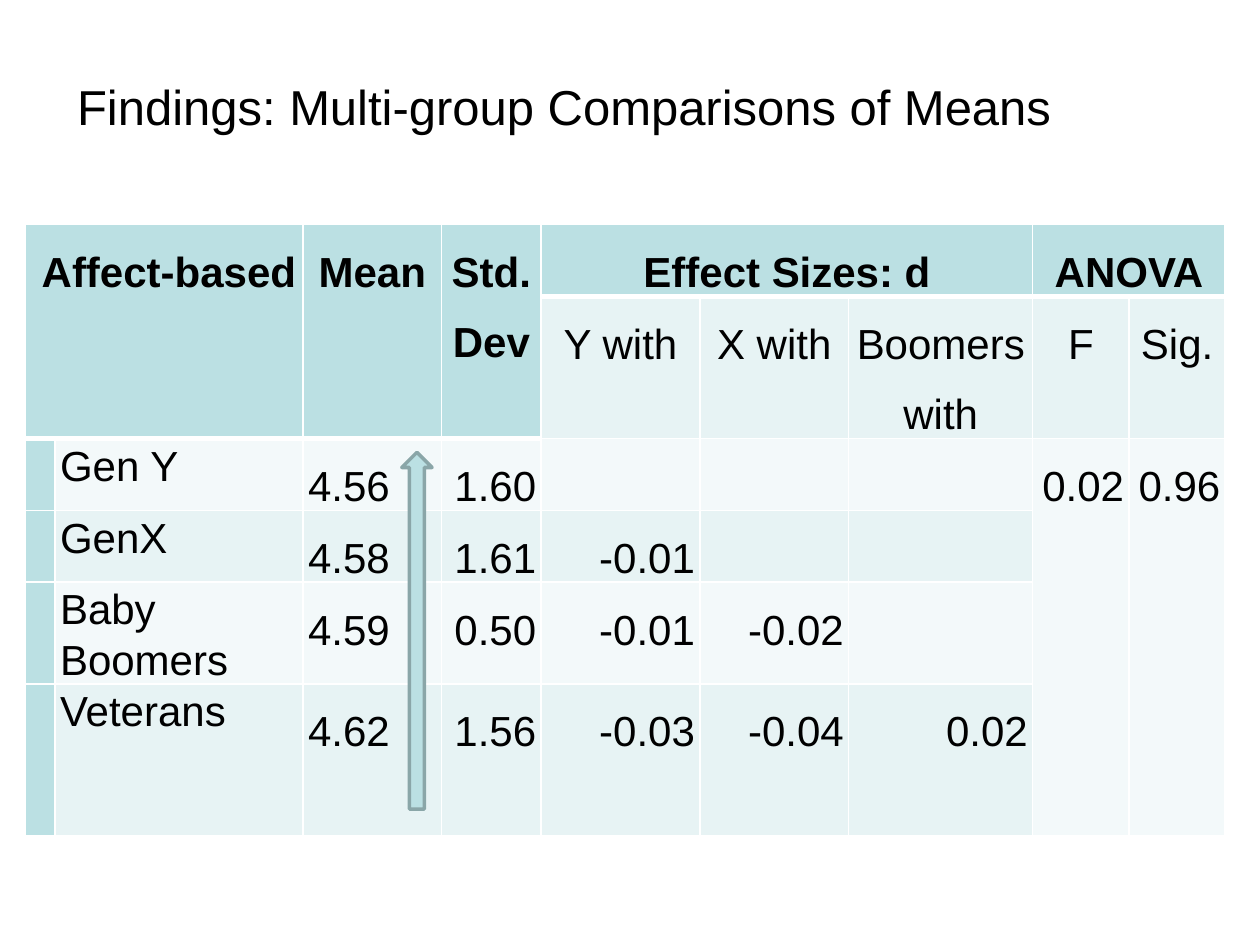
import collections

import lxml.etree
import pptx
import pptx.dml.color
import pptx.enum.shapes
import pptx.enum.text
import pptx.oxml.ns
import pptx.util

Cm = pptx.util.Cm
Pt = pptx.util.Pt
RGBColor = pptx.dml.color.RGBColor
ALIGN = pptx.enum.text.PP_ALIGN
Box = collections.namedtuple("Box", "left top width height")

BLACK = RGBColor(0x00, 0x00, 0x00)
WHITE = RGBColor(0xFF, 0xFF, 0xFF)
TEAL = RGBColor(0xBB, 0xE0, 0xE3)
TEAL_EDGE = RGBColor(0x8A, 0xA6, 0xA8)
BAND_DARK = RGBColor(0xE7, 0xF3, 0xF4)
BAND_LIGHT = RGBColor(0xF3, 0xF9, 0xFA)

FONT = "Arial"
COLUMN_WIDTHS = [0.61, 5, 2.79, 2.01, 3.2, 3, 3.71, 1.94, 1.94]
ROW_HEIGHTS = [1.42, 2.84, 1.45, 1.43, 2.04, 3.05]
HEADER_ROWS = 2
STUB_COLUMNS = 4
ROWS = [
    ["Affect-based", "", "Mean", "Std. Dev", "Effect Sizes: d", "", "", "ANOVA", ""],
    ["", "", "", "", "Y with", "X with", "Boomers with", "F", "Sig."],
    ["", "Gen Y", "4.56", "1.60", "", "", "", "0.02", "0.96"],
    ["", "GenX", "4.58", "1.61", "-0.01", "", "", "", ""],
    ["", "Baby Boomers", "4.59", "0.50", "-0.01", "-0.02", "", "", ""],
    ["", "Veterans", "4.62", "1.56", "-0.03", "-0.04", "0.02", "", ""],
]
MERGES = [
    ((0, 0), (1, 1)), ((0, 2), (1, 2)), ((0, 3), (1, 3)),
    ((0, 4), (0, 6)), ((0, 7), (0, 8)), ((2, 7), (5, 7)), ((2, 8), (5, 8)),
]


def style_font(font, size, bold=False):
    """Apply the common typeface and colour."""
    font.name = FONT
    font.size = Pt(size)
    font.bold = bold
    font.color.rgb = BLACK


def add_title(page, box, text):
    """Place and format the title placeholder."""
    title = page.shapes.title
    title.left, title.top, title.width, title.height = map(Cm, box)
    frame = title.text_frame
    frame.text = text
    frame.vertical_anchor = pptx.enum.text.MSO_ANCHOR.MIDDLE
    frame.paragraphs[0].alignment = ALIGN.LEFT
    style_font(frame.paragraphs[0].runs[0].font, 28)


def set_borders(cell, top, bottom):
    """Draw white cell borders with the given top and bottom widths in points."""
    properties = cell._tc.get_or_add_tcPr()
    for side, width in (("L", 1), ("R", 1), ("T", top), ("B", bottom)):
        line = lxml.etree.SubElement(
            properties, pptx.oxml.ns.qn(f"a:ln{side}"), w=str(Pt(width)))
        fill = lxml.etree.SubElement(line, pptx.oxml.ns.qn("a:solidFill"))
        lxml.etree.SubElement(fill, pptx.oxml.ns.qn("a:srgbClr"), val=str(WHITE))


def cell_fill(row, column):
    """Return the fill for a cell from its place in the grid."""
    is_header = row == 0 or (row < HEADER_ROWS and column < STUB_COLUMNS)
    if is_header or column == 0:
        return TEAL
    return BAND_DARK if row % 2 else BAND_LIGHT


def cell_alignment(row, column):
    """Return the alignment for a cell from its place in the grid."""
    if column < 2 or (row >= HEADER_ROWS and column == 2):
        return ALIGN.LEFT
    return ALIGN.CENTER if row < HEADER_ROWS else ALIGN.RIGHT


def format_cell(cell, row, column, text):
    """Fill in one cell with its text, borders and colour."""
    heavy_edge = HEADER_ROWS if column < STUB_COLUMNS else 1
    set_borders(cell, 3 if row == heavy_edge else 1, 3 if row + 1 == heavy_edge else 1)
    cell.fill.solid()
    cell.fill.fore_color.rgb = cell_fill(row, column)
    cell.margin_left = Cm(0.34 if row == column == 0 else 0.1)
    cell.margin_right = Cm(0.1)
    cell.margin_top = Cm(0.03)
    cell.margin_bottom = 0
    if text:
        para = cell.text_frame.paragraphs[0]
        para.text = text
        para.alignment = cell_alignment(row, column)
        para.line_spacing = 1.07 if column == 1 else 1.5
        style_font(para.runs[0].font, 24, bold=row == 0)


def add_means_table(page, box):
    """Add the table of group means, effect sizes and ANOVA results."""
    frame = page.shapes.add_table(len(ROWS), len(COLUMN_WIDTHS), *map(Cm, box))
    table = frame.table
    for column, width in zip(table.columns, COLUMN_WIDTHS):
        column.width = Cm(width)
    for row, height in zip(table.rows, ROW_HEIGHTS):
        row.height = Cm(height)
    for first, last in MERGES:
        table.cell(*first).merge(table.cell(*last))
    for row, texts in enumerate(ROWS):
        for column, text in enumerate(texts):
            format_cell(table.cell(row, column), row, column, text)


def add_trend_arrow(page, box):
    """Add the upward arrow beside the means."""
    arrow = page.shapes.add_shape(
        pptx.enum.shapes.MSO_SHAPE.UP_ARROW, *map(Cm, box))
    arrow.shadow.inherit = False
    arrow.fill.solid()
    arrow.fill.fore_color.rgb = TEAL
    arrow.line.color.rgb = TEAL_EDGE
    arrow.line.width = Pt(2)


def main():
    """Build and save the deck."""
    deck = pptx.Presentation()
    deck.slide_width, deck.slide_height = Cm(25.4), Cm(19.05)
    page = deck.slides.add_slide(deck.slide_layouts[5])
    add_title(page, Box(1.3, 0.53, 22.86, 3.2),
              "Findings: Multi-group Comparisons of Means")
    table_box = Box(0.5, 4.53, sum(COLUMN_WIDTHS), sum(ROW_HEIGHTS))
    add_means_table(page, table_box)
    add_trend_arrow(page, Box(table_box.left + 7.6, table_box.top + 4.59, 0.61, 7.19))
    deck.save("out.pptx")


if __name__ == "__main__":
    main()
